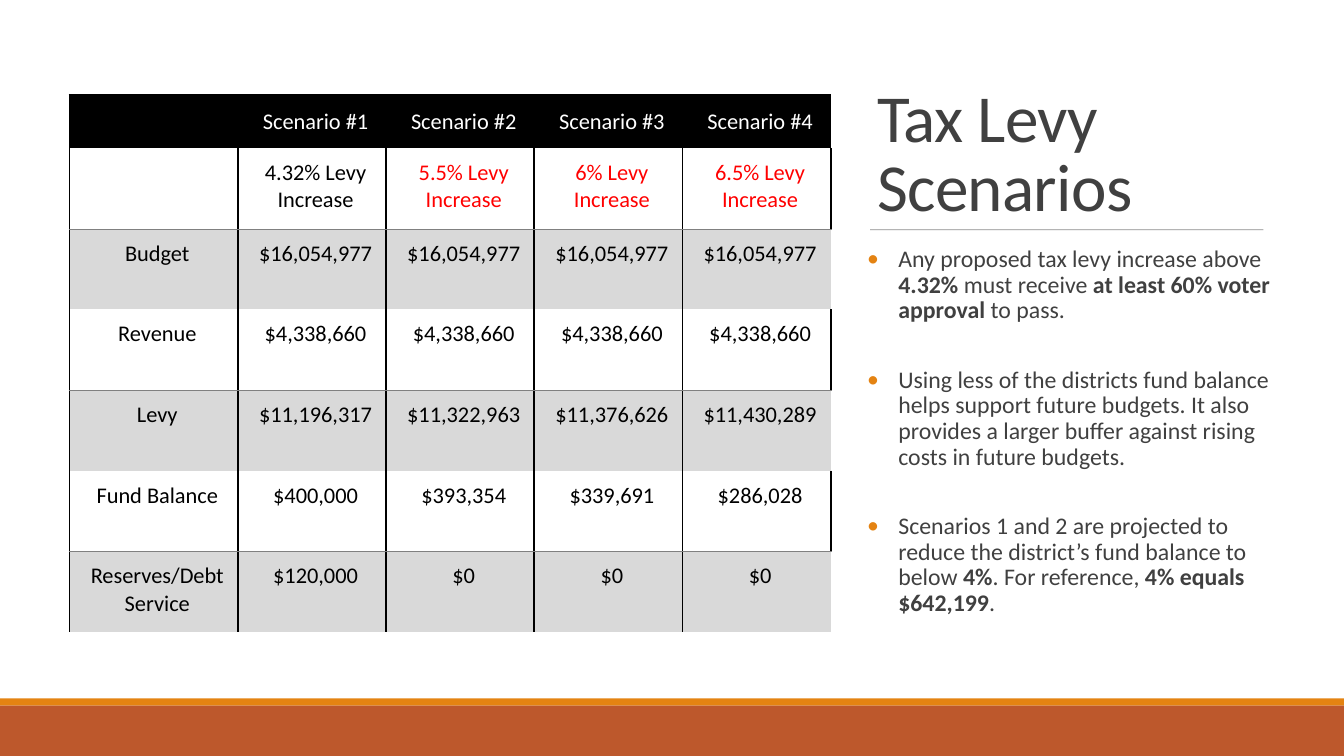
from lxml import etree
from pptx import Presentation
from pptx.dml.color import RGBColor
from pptx.enum.shapes import MSO_CONNECTOR, MSO_SHAPE
from pptx.enum.text import MSO_ANCHOR, MSO_AUTO_SIZE, PP_ALIGN
from pptx.oxml.ns import qn
from pptx.util import Inches, Pt

STRAIGHT, RECTANGLE = MSO_CONNECTOR.STRAIGHT, MSO_SHAPE.RECTANGLE
TOP, MIDDLE, BOTTOM = MSO_ANCHOR.TOP, MSO_ANCHOR.MIDDLE, MSO_ANCHOR.BOTTOM
LEFT, CENTER = PP_ALIGN.LEFT, PP_ALIGN.CENTER
FIXED_SIZE = MSO_AUTO_SIZE.NONE

BLACK = RGBColor(0x00, 0x00, 0x00)
WHITE = RGBColor(0xFF, 0xFF, 0xFF)
RED = RGBColor(0xFF, 0x00, 0x00)
SHADE = RGBColor(0xD9, 0xD9, 0xD9)
RULE_GRAY = RGBColor(0x80, 0x80, 0x80)
TEXT_GRAY = RGBColor(0x40, 0x40, 0x40)
ORANGE = RGBColor(0xE4, 0x83, 0x12)
RUST = RGBColor(0xBD, 0x58, 0x2C)
FONT = "Calibri"

TITLE = "Tax Levy Scenarios"
POINTS = [  # runs of (text, bold)
    [("Any proposed tax levy increase above ", False), ("4.32%", True),
     (" must receive ", False), ("at least 60% voter approval", True),
     (" to pass.", False)],
    [("Using less of the districts fund balance helps support future budgets. "
      "It also provides a larger buffer against rising costs in future budgets.",
      False)],
    [("Scenarios 1 and 2 are projected to reduce the district’s fund balance "
      "to below ", False), ("4%", True), (". For reference, ", False),
     ("4% equals $642,199", True), (".", False)],
]
SCENARIOS = [
    ("", "Scenario #1", "Scenario #2", "Scenario #3", "Scenario #4"),
    ("", "4.32% Levy Increase", "5.5% Levy Increase", "6% Levy Increase",
     "6.5% Levy Increase"),
    ("Budget", "$16,054,977", "$16,054,977", "$16,054,977", "$16,054,977"),
    ("Revenue", "$4,338,660", "$4,338,660", "$4,338,660", "$4,338,660"),
    ("Levy", "$11,196,317", "$11,322,963", "$11,376,626", "$11,430,289"),
    ("Fund Balance", "$400,000", "$393,354", "$339,691", "$286,028"),
    ("Reserves/Debt Service", "$120,000", "$0", "$0", "$0"),
]

SLIDE_W, SLIDE_H = 13.33, 7.5
TABLE_LEFT, TABLE_TOP = 0.69, 0.94
COLUMNS = [1.67] + [1.47] * 4
ROWS = [0.53] + [0.8] * 6
SIDE_LEFT, SIDE_W = 8.6, 4.04
RULE_Y = 2.28
BANDS = [(6.93, 0.07, ORANGE), (7.0, 0.5, RUST)]  # top, height, colour
HEAVY, FINE = (BLACK, 1.5), (RULE_GRAY, 0.5)


def place(shape, left, top, width, height):
    shape.left, shape.top = Inches(left), Inches(top)
    shape.width, shape.height = Inches(width), Inches(height)


def format_runs(paragraph, size, color):
    for run in paragraph.runs:
        run.font.name, run.font.size = FONT, Pt(size)
        run.font.color.rgb = color


def add_bullet(paragraph, indent):
    props = paragraph._p.get_or_add_pPr()
    props.set("marL", str(Inches(indent)))
    props.set("indent", str(-Inches(indent)))
    bullet_color = etree.SubElement(props, qn("a:buClr"))
    etree.SubElement(bullet_color, qn("a:srgbClr"), val=str(ORANGE))
    etree.SubElement(props, qn("a:buFont"), typeface=FONT)
    etree.SubElement(props, qn("a:buChar"), char="•")


def cell_borders(row, column):
    """Map each side to (colour, points); sides left out have no line."""
    if row == 0:
        return {"T": HEAVY, "L": HEAVY} if column == 0 else {"T": HEAVY}
    if row % 2:
        return {"L": HEAVY, "R": HEAVY, "B": FINE}
    borders = {"L": HEAVY, "T": FINE}
    if column < len(COLUMNS) - 1:
        borders["R"] = HEAVY
    return borders


def draw_borders(cell, borders):
    props = cell._tc.get_or_add_tcPr()
    for side in "LRTB":
        line = etree.SubElement(props, qn(f"a:ln{side}"))
        if side in borders:
            color, points = borders[side]
            line.set("w", str(Pt(points)))
            fill = etree.SubElement(line, qn("a:solidFill"))
            etree.SubElement(fill, qn("a:srgbClr"), val=str(color))
        else:
            etree.SubElement(line, qn("a:noFill"))


def cell_colors(row, column):
    """Return the fill and text colours."""
    if row == 0:
        return BLACK, WHITE
    if row == 1 and column > 1:
        return WHITE, RED
    return (WHITE if row % 2 else SHADE), BLACK


def add_scenario_table(slide):
    frame = slide.shapes.add_table(
        len(ROWS), len(COLUMNS), Inches(TABLE_LEFT), Inches(TABLE_TOP),
        Inches(sum(COLUMNS)), Inches(sum(ROWS)))
    table = frame.table
    table.first_row = table.horz_banding = False
    for column, width in zip(table.columns, COLUMNS):
        column.width = Inches(width)
    for row, height in zip(table.rows, ROWS):
        row.height = Inches(height)
    for r, texts in enumerate(SCENARIOS):
        for c, text in enumerate(texts):
            cell = table.cell(r, c)
            fill, color = cell_colors(r, c)
            draw_borders(cell, cell_borders(r, c))
            cell.fill.solid()
            cell.fill.fore_color.rgb = fill
            cell.margin_left, cell.margin_right = Inches(0.15), Inches(0.08)
            cell.margin_top = cell.margin_bottom = Inches(0.11)
            cell.vertical_anchor = TOP if r else MIDDLE
            cell.text_frame.text = text
            paragraph = cell.text_frame.paragraphs[0]
            paragraph.alignment = CENTER
            format_runs(paragraph, 16, color)


def fill_title(title):
    place(title, SIDE_LEFT, 0.69, SIDE_W, 1.59)
    frame = title.text_frame
    frame.text = TITLE
    frame.auto_size, frame.vertical_anchor = FIXED_SIZE, BOTTOM
    paragraph = frame.paragraphs[0]
    paragraph.alignment, paragraph.line_spacing = LEFT, 0.85
    format_runs(paragraph, 48, TEXT_GRAY)
    paragraph.runs[0].font._element.set("spc", "-50")


def fill_points(body):
    place(body, SIDE_LEFT, 2.4, SIDE_W, 4.01)
    frame = body.text_frame
    frame.auto_size, frame.vertical_anchor = FIXED_SIZE, TOP
    frame.margin_left = frame.margin_right = 0
    for i, point in enumerate(POINTS):
        paragraph = frame.add_paragraph() if i else frame.paragraphs[0]
        add_bullet(paragraph, 0.31)
        paragraph.line_spacing = 0.9
        paragraph.space_before, paragraph.space_after = Pt(0), Pt(31)
        for text, bold in point:
            run = paragraph.add_run()
            run.text, run.font.bold = text, bold
        format_runs(paragraph, 17, TEXT_GRAY)


def add_title_rule(slide):
    rule = slide.shapes.add_connector(
        STRAIGHT, Inches(8.63), Inches(RULE_Y), Inches(12.53), Inches(RULE_Y))
    rule.line.color.rgb, rule.line.width = RULE_GRAY, Pt(0.5)
    color = rule._element.spPr.find(".//" + qn("a:srgbClr"))
    etree.SubElement(color, qn("a:alpha"), val="90000")
    etree.SubElement(rule._element.spPr, qn("a:effectLst"))


def add_bands(slide):
    for top, height, color in BANDS:
        band = slide.shapes.add_shape(
            RECTANGLE, 0, Inches(top), Inches(SLIDE_W), Inches(height))
        band.shadow.inherit = False
        band.fill.solid()
        band.fill.fore_color.rgb = color
        band.line.fill.background()


def main():
    deck = Presentation()
    deck.slide_width, deck.slide_height = Inches(SLIDE_W), Inches(SLIDE_H)
    slide = deck.slides.add_slide(deck.slide_layouts[1])
    slide.background.fill.solid()
    slide.background.fill.fore_color.rgb = WHITE
    fill_title(slide.shapes.title)
    add_title_rule(slide)
    fill_points(slide.placeholders[1])
    add_bands(slide)
    add_scenario_table(slide)
    deck.save("out.pptx")


if __name__ == "__main__":
    main()
